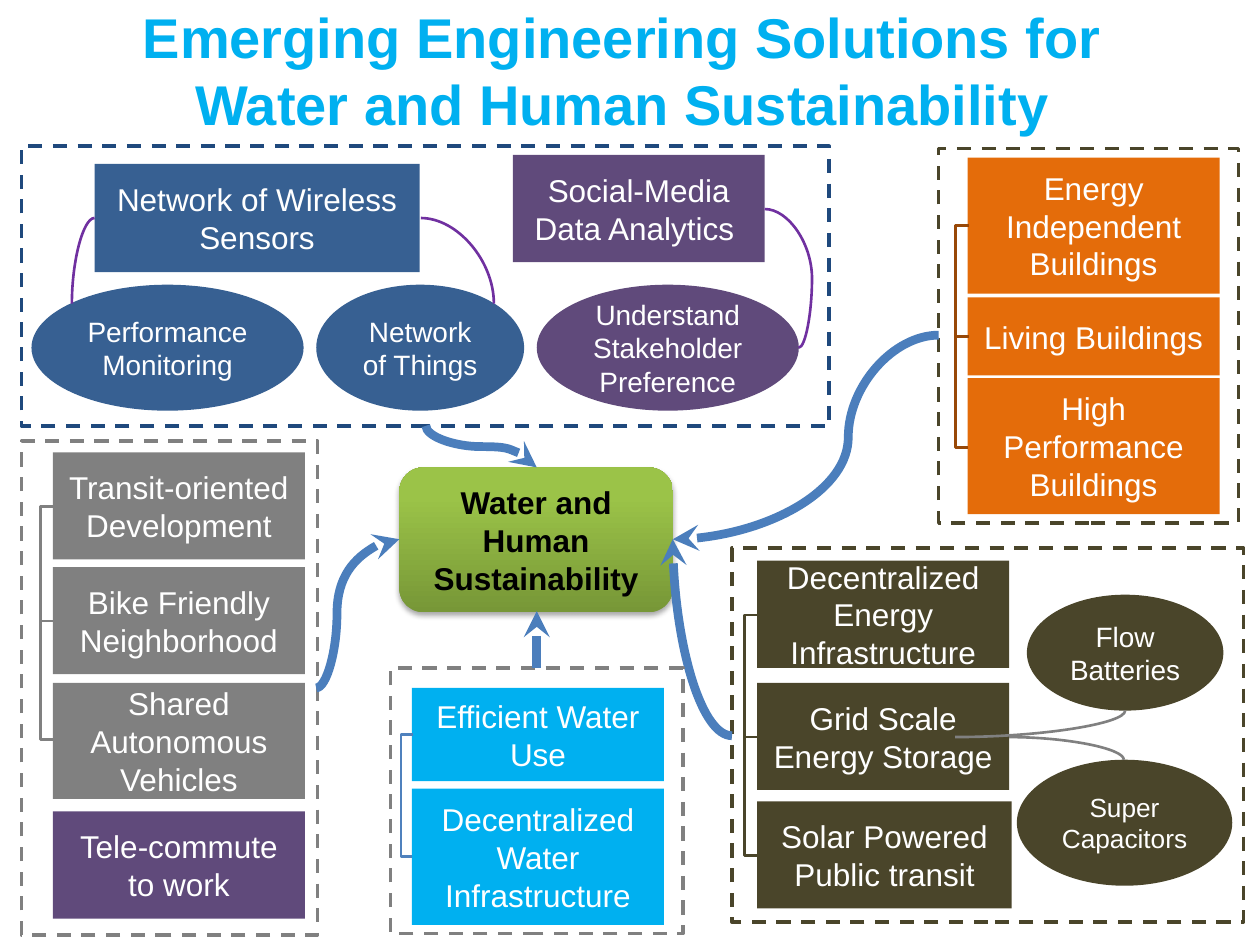
from itertools import pairwise

from lxml import etree
from pptx import Presentation
from pptx.dml.color import RGBColor
from pptx.enum.dml import MSO_LINE
from pptx.enum.shapes import MSO_CONNECTOR, MSO_SHAPE
from pptx.enum.text import MSO_ANCHOR, PP_ALIGN
from pptx.oxml import parse_xml
from pptx.oxml.ns import nsdecls, qn
from pptx.util import Pt

PX = 9144
FONT = "Arial"
QUARTER_TURN = "5400000"

RECT = MSO_SHAPE.RECTANGLE
ROUNDED = MSO_SHAPE.ROUNDED_RECTANGLE
OVAL = MSO_SHAPE.OVAL
STRAIGHT = MSO_CONNECTOR.STRAIGHT
ELBOW = MSO_CONNECTOR.ELBOW
CURVE = MSO_CONNECTOR.CURVE
DASH = MSO_LINE.DASH
CENTER = PP_ALIGN.CENTER
MIDDLE = MSO_ANCHOR.MIDDLE

WHITE = RGBColor(0xFF, 0xFF, 0xFF)
BLACK = RGBColor(0x00, 0x00, 0x00)
SKY = RGBColor(0x00, 0xB0, 0xF0)
GRAY = RGBColor(0x80, 0x80, 0x80)
PURPLE = RGBColor(0x60, 0x4A, 0x7B)
VIOLET = RGBColor(0x70, 0x30, 0xA0)
BLUE = RGBColor(0x37, 0x60, 0x92)
NAVY = RGBColor(0x1F, 0x49, 0x7D)
FLOW_BLUE = RGBColor(0x4B, 0x7E, 0xBC)
BRACKET_BLUE = RGBColor(0x4F, 0x81, 0xBD)
ORANGE = RGBColor(0xE4, 0x6C, 0x0A)
BROWN = RGBColor(0x98, 0x48, 0x07)
OLIVE = RGBColor(0x4A, 0x45, 0x2A)
LEAF = RGBColor(0x9B, 0xC3, 0x48)
MOSS = RGBColor(0x77, 0x97, 0x37)

HUB_SHADOW = (
    f'<a:effectLst {nsdecls("a")}>'
    '<a:outerShdw blurRad="40000" dist="23000" dir="5400000" rotWithShape="0">'
    '<a:srgbClr val="000000"><a:alpha val="35000"/></a:srgbClr>'
    '</a:outerShdw></a:effectLst>'
)


def scaled(lengths):
    return [round(length * PX) for length in lengths]


def write(frame, wording, size, color, bold=False):
    frame.word_wrap = True
    frame.vertical_anchor = MIDDLE
    for number, line in enumerate(wording.split("\n")):
        paragraph = frame.add_paragraph() if number else frame.paragraphs[0]
        paragraph.alignment = CENTER
        run = paragraph.add_run()
        run.text = line
        run.font.name = FONT
        run.font.size = Pt(size)
        run.font.bold = bold
        run.font.color.rgb = color


def add_title(slide, box, wording):
    title = slide.shapes.add_textbox(*scaled(box))
    write(title.text_frame, wording, 32, SKY, bold=True)


def add_topic(slide, box, wording, color, outline=RECT, size=18):
    topic = slide.shapes.add_shape(outline, *scaled(box))
    topic.shadow.inherit = False
    topic.fill.solid()
    topic.fill.fore_color.rgb = color
    topic.line.fill.background()
    write(topic.text_frame, wording, size, WHITE)


def add_hub(slide, box, wording):
    hub = slide.shapes.add_shape(ROUNDED, *scaled(box))
    hub.fill.gradient()
    hub.fill.gradient_angle = 90
    for stop, color, position in zip(hub.fill.gradient_stops, (MOSS, LEAF), (0, 0.8)):
        stop.color.rgb = color
        stop.position = position
    hub.line.fill.background()
    hub._element.spPr.append(parse_xml(HUB_SHADOW))
    write(hub.text_frame, wording, 18, BLACK, bold=True)


def add_frame(slide, box, color):
    frame = slide.shapes.add_shape(RECT, *scaled(box))
    frame.shadow.inherit = False
    frame.fill.background()
    frame.line.color.rgb = color
    frame.line.width = Pt(2)
    frame.line.dash_style = DASH


def add_link(slide, kind, start, end, color, width=1.5, bend=None, upright=False):
    (x1, y1), (x2, y2) = start, end
    if upright:
        middle_x, middle_y = (x1 + x2) / 2, (y1 + y2) / 2
        half_run, half_rise = (y2 - y1) / 2, (x1 - x2) / 2
        x1, x2 = middle_x - half_run, middle_x + half_run
        y1, y2 = middle_y - half_rise, middle_y + half_rise
    link = slide.shapes.add_connector(kind, *scaled((x1, y1, x2, y2)))
    link.line.color.rgb = color
    link.line.width = Pt(width)
    properties = link._element.spPr
    if upright:
        properties.xfrm.set("rot", QUARTER_TURN)
    geometry = properties.find(qn("a:prstGeom"))
    if bend is not None:
        guides = geometry.find(qn("a:avLst"))
        etree.SubElement(guides, qn("a:gd"), name="adj1", fmla=f"val {round(bend * 100000)}")
    elif kind == CURVE:
        geometry.set("prst", "curvedConnector2")
    etree.SubElement(properties, qn("a:effectLst"))
    return link


def add_flow(slide, start, end, kind=CURVE, **course):
    flow = add_link(slide, kind, start, end, FLOW_BLUE, width=5, **course)
    outline = flow.line._get_or_add_ln()
    etree.SubElement(outline, qn("a:tailEnd"), type="stealth")


def add_bracket(slide, edge, spine, levels, color):
    for upper, lower in pairwise(levels):
        add_link(slide, ELBOW, (edge + 1, upper), (edge, lower), color,
                 bend=edge + 1 - spine)


def add_transport(slide):
    for top, height, wording, color in (
        (359, 85, "Transit-oriented Development", GRAY),
        (450, 85, "Bike Friendly Neighborhood", GRAY),
        (644, 85, "Tele-commute to work", PURPLE),
        (542, 92, "Shared Autonomous Vehicles", GRAY),
    ):
        add_topic(slide, (42, top, 200, height), wording, color)
    add_bracket(slide, 42, 32, (402, 493, 587), GRAY)
    add_frame(slide, (17, 350, 235, 392), GRAY)
    add_flow(slide, (251, 546), (317, 428), bend=0.25)


def add_sensing(slide):
    add_topic(slide, (75, 130, 258, 86), "Network of Wireless Sensors", BLUE)
    add_topic(slide, (407, 123, 200, 85), "Social-Media Data Analytics ", PURPLE)
    for left, width, wording, color in (
        (426, 208, "Understand Stakeholder Preference", PURPLE),
        (25, 216, "Performance Monitoring", BLUE),
        (251, 165, "Network of Things", BLUE),
    ):
        add_topic(slide, (left, 226, width, 100), wording, color, OVAL, 16)
    add_link(slide, CURVE, (634, 276), (607, 166), VIOLET, bend=-0.39)
    for start, end in (((57, 241), (75, 173)), ((392, 241), (334, 173))):
        add_link(slide, CURVE, start, end, VIOLET, upright=True)
    add_frame(slide, (17, 116, 641, 222), NAVY)
    add_flow(slide, (338, 338), (426, 371), bend=0.5, upright=True)


def add_buildings(slide):
    for top, height, wording in (
        (300, 108, "High Performance Buildings"),
        (236, 62, "Living Buildings"),
        (125, 108, "Energy Independent\nBuildings"),
    ):
        add_topic(slide, (768, top, 200, height), wording, ORANGE)
    add_frame(slide, (745, 118, 238, 297), OLIVE)
    add_bracket(slide, 768, 758, (179, 267, 355), BROWN)
    add_flow(slide, (745, 266), (534, 428), bend=0.34)


def add_energy(slide):
    add_topic(slide, (601, 542, 200, 85), "Grid Scale Energy Storage", OLIVE)
    add_topic(slide, (815, 472, 156, 92), "Flow Batteries", OLIVE, OVAL, 16)
    add_topic(slide, (807, 603, 171, 100), "Super Capacitors", OLIVE, OVAL, 15)
    add_link(slide, CURVE, (758, 585), (893, 564), GRAY)
    add_link(slide, CURVE, (801, 585), (892, 603), GRAY)
    add_topic(slide, (601, 636, 202, 85), "Solar Powered Public transit", OLIVE)
    add_topic(slide, (601, 445, 200, 85), "Decentralized Energy Infrastructure", OLIVE)
    add_bracket(slide, 601, 591, (488, 585, 679), OLIVE)
    add_frame(slide, (581, 435, 406, 297), OLIVE)
    add_flow(slide, (581, 584), (534, 428))


def add_water(slide):
    add_topic(slide, (327, 626, 200, 108), "Decentralized Water Infrastructure", SKY)
    add_topic(slide, (327, 546, 200, 74), "Efficient Water Use", SKY)
    add_bracket(slide, 327, 318, (583, 680), BRACKET_BLUE)
    add_frame(slide, (310, 530, 232, 211), GRAY)
    add_flow(slide, (426, 530), (426, 485), kind=STRAIGHT)


def main():
    deck = Presentation()
    deck.slide_width, deck.slide_height = scaled((1000, 750))
    slide = deck.slides.add_slide(deck.slide_layouts[6])
    add_title(slide, (44, 5, 900, 100),
              "Emerging Engineering Solutions for Water and Human Sustainability")
    add_hub(slide, (317, 371, 217, 115), "Water and Human Sustainability")
    add_transport(slide)
    add_sensing(slide)
    add_buildings(slide)
    add_energy(slide)
    add_water(slide)
    deck.save("out.pptx")


if __name__ == "__main__":
    main()
